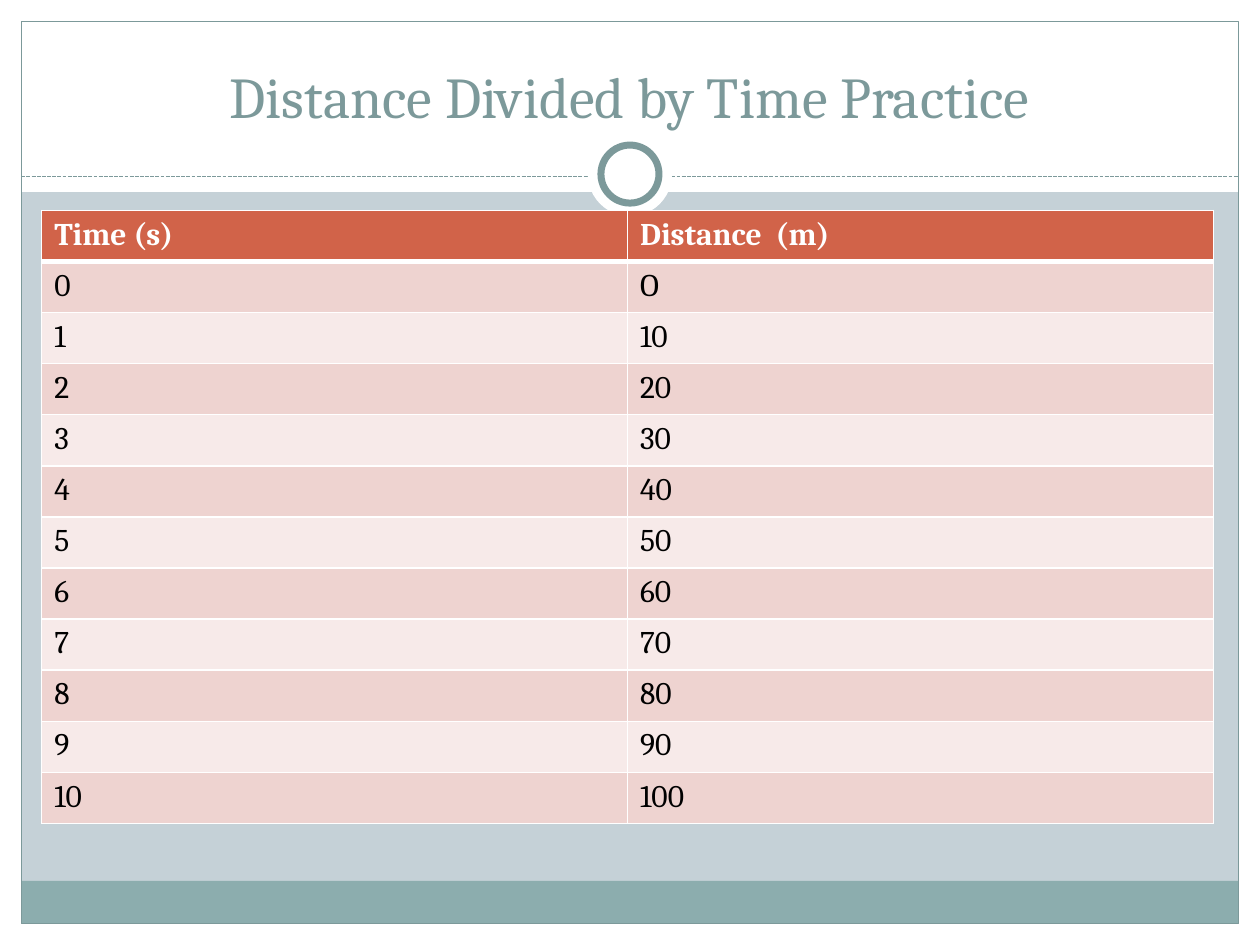
from dataclasses import dataclass
from typing import Optional

from lxml import etree
from pptx import Presentation
from pptx.dml.color import RGBColor
from pptx.enum.dml import MSO_LINE
from pptx.enum.shapes import MSO_CONNECTOR, MSO_SHAPE
from pptx.enum.text import MSO_ANCHOR, PP_ALIGN
from pptx.oxml.ns import qn
from pptx.util import Cm, Pt

RECTANGLE, OVAL = MSO_SHAPE.RECTANGLE, MSO_SHAPE.OVAL
STRAIGHT, DASH = MSO_CONNECTOR.STRAIGHT, MSO_LINE.SQUARE_DOT
CENTER, BOTTOM = PP_ALIGN.CENTER, MSO_ANCHOR.BOTTOM


@dataclass(frozen=True)
class Theme:
    font: str = "Cambria"
    title_size: float = 33
    table_size: float = 18
    background: str = "C5D1D7"
    white: str = "FFFFFF"
    black: str = "000000"
    accent: str = "7C999A"
    footer: str = "8CADAE"
    header: str = "D16349"
    bands: tuple = ("EED3D0", "F7EAE9")
    thin_line: float = 0.75
    ring_line: float = 4
    cell_line: float = 1
    header_line: float = 3


@dataclass(frozen=True)
class Panel:
    """A preset shape; lengths in centimetres, line width in points."""
    left: float
    top: float
    width: float
    height: float
    fill: Optional[str] = None
    line_width: float = 0
    kind: MSO_SHAPE = RECTANGLE


THEME = Theme()
WIDTH, HEIGHT = 25.4, 19.05
MARGIN = 0.43
INNER_WIDTH, INNER_HEIGHT = WIDTH - 2 * MARGIN, HEIGHT - 2 * MARGIN
FOOTER_HEIGHT = 0.86
DIVIDER_TOP = 3.56
RING_MIDDLE = 3.51


def disc(diameter: float, line_width: float = 0) -> Panel:
    """A white disc centred on the divider's ring."""
    return Panel((WIDTH - diameter) / 2, RING_MIDDLE - diameter / 2,
                 diameter, diameter, THEME.white, line_width, OVAL)


MARGINS = [
    Panel(0, HEIGHT - MARGIN, WIDTH, MARGIN, THEME.white),
    Panel(0, 0, WIDTH, 3.87, THEME.white),
    Panel(0, 0, MARGIN, HEIGHT, THEME.white),
    Panel(WIDTH - MARGIN, 0, MARGIN, HEIGHT, THEME.white),
]
FOOTER = Panel(MARGIN, HEIGHT - MARGIN - FOOTER_HEIGHT, INNER_WIDTH,
               FOOTER_HEIGHT, THEME.footer)
FRAME = Panel(MARGIN, MARGIN, INNER_WIDTH, INNER_HEIGHT,
              line_width=THEME.thin_line)
RING = [disc(1.7), disc(1.17, THEME.ring_line)]

TITLE = "Distance Divided by Time Practice"
TABLE_LEFT, TABLE_TOP = 0.84, 4.24
COLUMN_WIDTH, ROW_HEIGHT = 11.81, 1.03
ROWS = [("Time (s)", "Distance  (m)"), ("0", "O")]
ROWS += [(str(time), str(10 * time)) for time in range(1, 11)]


def color(value: str) -> RGBColor:
    return RGBColor.from_string(value)


def format_text(paragraph, size: float, text_color: str, bold: bool = False) -> None:
    font = paragraph.runs[0].font
    for name, value in {"name": THEME.font, "size": Pt(size), "bold": bold}.items():
        setattr(font, name, value)
    font.color.rgb = color(text_color)


def draw_panel(slide, panel: Panel) -> None:
    shape = slide.shapes.add_shape(panel.kind, Cm(panel.left), Cm(panel.top),
                                   Cm(panel.width), Cm(panel.height))
    shape.shadow.inherit = False
    if panel.fill:
        shape.fill.solid()
        shape.fill.fore_color.rgb = color(panel.fill)
    else:
        shape.fill.background()
    if panel.line_width:
        shape.line.color.rgb = color(THEME.accent)
        shape.line.width = Pt(panel.line_width)
    else:
        shape.line.fill.background()


def draw_divider(slide) -> None:
    divider = slide.shapes.add_connector(
        STRAIGHT, Cm(MARGIN), Cm(DIVIDER_TOP), Cm(WIDTH - MARGIN), Cm(DIVIDER_TOP))
    divider.line.color.rgb = color(THEME.accent)
    divider.line.width = Pt(THEME.thin_line)
    divider.line.dash_style = DASH
    properties = divider.element.find(qn("p:spPr"))
    etree.SubElement(properties, qn("a:effectLst"))


def draw_title(slide) -> None:
    title = slide.shapes.title
    box = {"left": Cm(0.84), "top": Cm(0.64), "width": Cm(23.7), "height": Cm(2.11)}
    for name, value in box.items():
        setattr(title, name, value)
    title.text_frame.text = TITLE
    title.text_frame.vertical_anchor = BOTTOM
    paragraph = title.text_frame.paragraphs[0]
    paragraph.alignment = CENTER
    format_text(paragraph, THEME.title_size, THEME.accent)
    # Bring the title in front of the white panels
    title.element.getparent().append(title.element)


def set_borders(cell, top: float, bottom: float) -> None:
    properties = cell._tc.get_or_add_tcPr()
    widths = {"a:lnL": THEME.cell_line, "a:lnR": THEME.cell_line,
              "a:lnT": top, "a:lnB": bottom}
    for tag, width in widths.items():
        line = etree.SubElement(properties, qn(tag), w=str(Pt(width)))
        fill = etree.SubElement(line, qn("a:solidFill"))
        etree.SubElement(fill, qn("a:srgbClr"), val=THEME.white)


def draw_table(slide) -> None:
    columns = len(ROWS[0])
    table = slide.shapes.add_table(
        len(ROWS), columns, Cm(TABLE_LEFT), Cm(TABLE_TOP),
        Cm(columns * COLUMN_WIDTH), Cm(len(ROWS) * ROW_HEIGHT)).table
    for row_index, values in enumerate(ROWS):
        is_header = row_index == 0
        fill = THEME.header if is_header else THEME.bands[(row_index - 1) % 2]
        text_color = THEME.white if is_header else THEME.black
        top = THEME.header_line if row_index == 1 else THEME.cell_line
        bottom = THEME.header_line if is_header else THEME.cell_line
        for column_index, value in enumerate(values):
            cell = table.cell(row_index, column_index)
            cell.text = value
            format_text(cell.text_frame.paragraphs[0], THEME.table_size,
                        text_color, is_header)
            set_borders(cell, top, bottom)
            cell.fill.solid()
            cell.fill.fore_color.rgb = color(fill)


def main() -> None:
    presentation = Presentation()
    presentation.slide_width, presentation.slide_height = Cm(WIDTH), Cm(HEIGHT)
    slide = presentation.slides.add_slide(presentation.slide_layouts[5])
    slide.background.fill.solid()
    slide.background.fill.fore_color.rgb = color(THEME.background)

    # Page frame
    for panel in [*MARGINS, FOOTER, FRAME]:
        draw_panel(slide, panel)

    # Divider with its ring
    draw_divider(slide)
    for panel in RING:
        draw_panel(slide, panel)

    # Content
    draw_title(slide)
    draw_table(slide)
    presentation.save("out.pptx")


if __name__ == "__main__":
    main()
